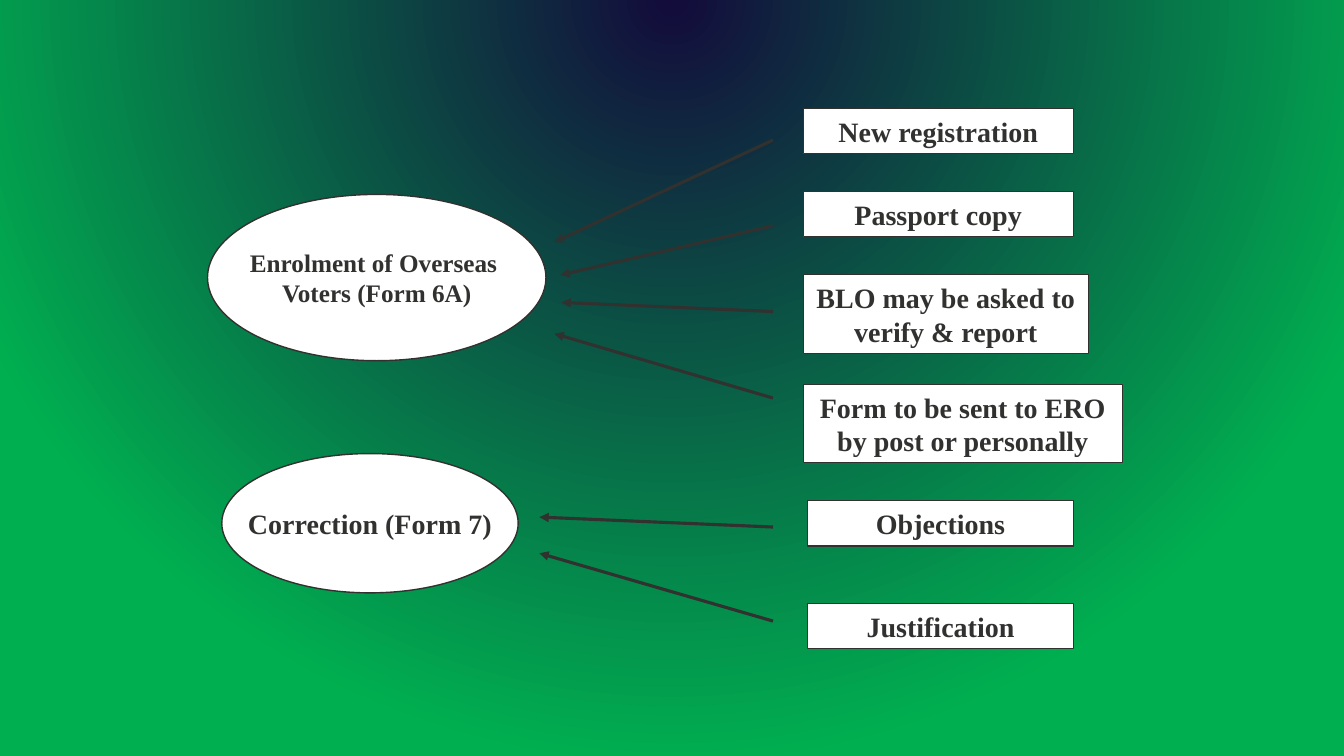
from lxml.etree import SubElement as Sub
from pptx import Presentation
from pptx.dml.color import RGBColor as Rgb
from pptx.enum.shapes import MSO_CONNECTOR as Link, MSO_SHAPE as Kind
from pptx.enum.text import MSO_ANCHOR as Anchor, MSO_AUTO_SIZE as Fit, PP_ALIGN as Align
from pptx.oxml import parse_xml
from pptx.oxml.ns import nsdecls, qn
from pptx.util import Cm, Pt

COLORS = {"ink": "31312F", "paper": "FFFFFF", "navy": "130D3C", "green": "00B050"}


class Board:
    font = "Times New Roman"
    inset = (0.27, 0.15)

    def __init__(self, deck):
        self.slide = deck.slides.add_slide(deck.slide_layouts[6])
        self.shapes = self.slide.shapes

    def color(self, name):
        return Rgb.from_string(COLORS[name])

    def backdrop(self):
        fill = self.slide.background.fill
        fill.gradient()
        old = self.slide.element.find(".//" + qn("a:gradFill"))
        new = parse_xml(
            f'<a:gradFill {nsdecls("a")} rotWithShape="1"><a:gsLst>'
            f'<a:gs pos="1000"><a:srgbClr val="{COLORS["navy"]}"><a:alpha val="76000"/></a:srgbClr></a:gs>'
            f'<a:gs pos="100000"><a:srgbClr val="{COLORS["green"]}"/></a:gs></a:gsLst>'
            '<a:path path="circle"><a:fillToRect l="50000" t="-80000" r="50000" b="180000"/></a:path>'
            '</a:gradFill>')
        old.getparent().replace(old, new)

    def shape(self, kind, area, text, size, line):
        item = self.shapes.add_shape(kind, *map(Cm, area))
        item.shadow.inherit = False
        item.fill.solid()
        item.fill.fore_color.rgb = self.color("paper")
        item.line.color.rgb = self.color("ink")
        item.line.width = Pt(line)
        frame = item.text_frame
        frame.text = text
        frame.margin_left = frame.margin_right = Cm(self.inset[0])
        frame.margin_top = frame.margin_bottom = Cm(self.inset[1])
        for para in frame.paragraphs:
            para.alignment = Align.CENTER
            for run in para.runs:
                font = run.font
                font.name, font.size, font.bold = self.font, Pt(size), True
                font.color.rgb = self.color("ink")
        return frame

    def oval(self, area, text, size):
        frame = self.shape(Kind.OVAL, area, text, size, 1)
        frame.vertical_anchor = Anchor.MIDDLE
        frame.word_wrap = False

    def box(self, area, text):
        frame = self.shape(Kind.RECTANGLE, area, text, 20, 0.75)
        frame.vertical_anchor = Anchor.TOP
        frame.word_wrap = True
        frame.auto_size = Fit.SHAPE_TO_FIT_TEXT

    def arrow(self, tip, tail):
        item = self.shapes.add_connector(Link.STRAIGHT, *map(Cm, tip + tail))
        item.line.color.rgb = self.color("ink")
        item.line.width = Pt(2.25)
        Sub(item.line._get_or_add_ln(), qn("a:headEnd"), type="triangle")
        Sub(item._element.spPr, qn("a:effectLst"))


def main():
    deck = Presentation()
    deck.slide_width, deck.slide_height = Cm(33.87), Cm(19.05)
    board = Board(deck)
    board.backdrop()

    # Forms on the left
    board.oval((5.23, 4.9, 8.53, 4.19), "Enrolment of Overseas \nVoters (Form 6A)", 18)
    board.oval((5.59, 11.43, 7.47, 3.51), "Correction (Form 7)", 20)

    # Arrows from the steps to the forms
    start = 19.48
    for x, y, begin in (
        (13.97, 6.1, 3.53),
        (14.12, 6.93, 5.69),
        (14.15, 7.62, 7.85),
        (13.97, 8.41, 10.03),
        (13.59, 13.03, 13.28),
        (13.59, 13.94, 15.65),
    ):
        board.arrow((x, y), (start, begin))

    # Steps on the right
    low, high = 1.14, 1.98
    for x, y, width, height, text in (
        (20.24, 2.74, 6.81, low, "New registration"),
        (20.24, 4.83, 6.81, low, "Passport copy"),
        (20.24, 6.93, 7.19, high, "BLO may be asked to verify & report"),
        (20.24, 9.68, 8.05, high, "Form to be sent to ERO by post or personally"),
        (20.35, 12.62, 6.71, low, "Objections"),
        (20.35, 15.21, 6.71, low, "Justification"),
    ):
        board.box((x, y, width, height), text)

    deck.save("out.pptx")


if __name__ == "__main__":
    main()
